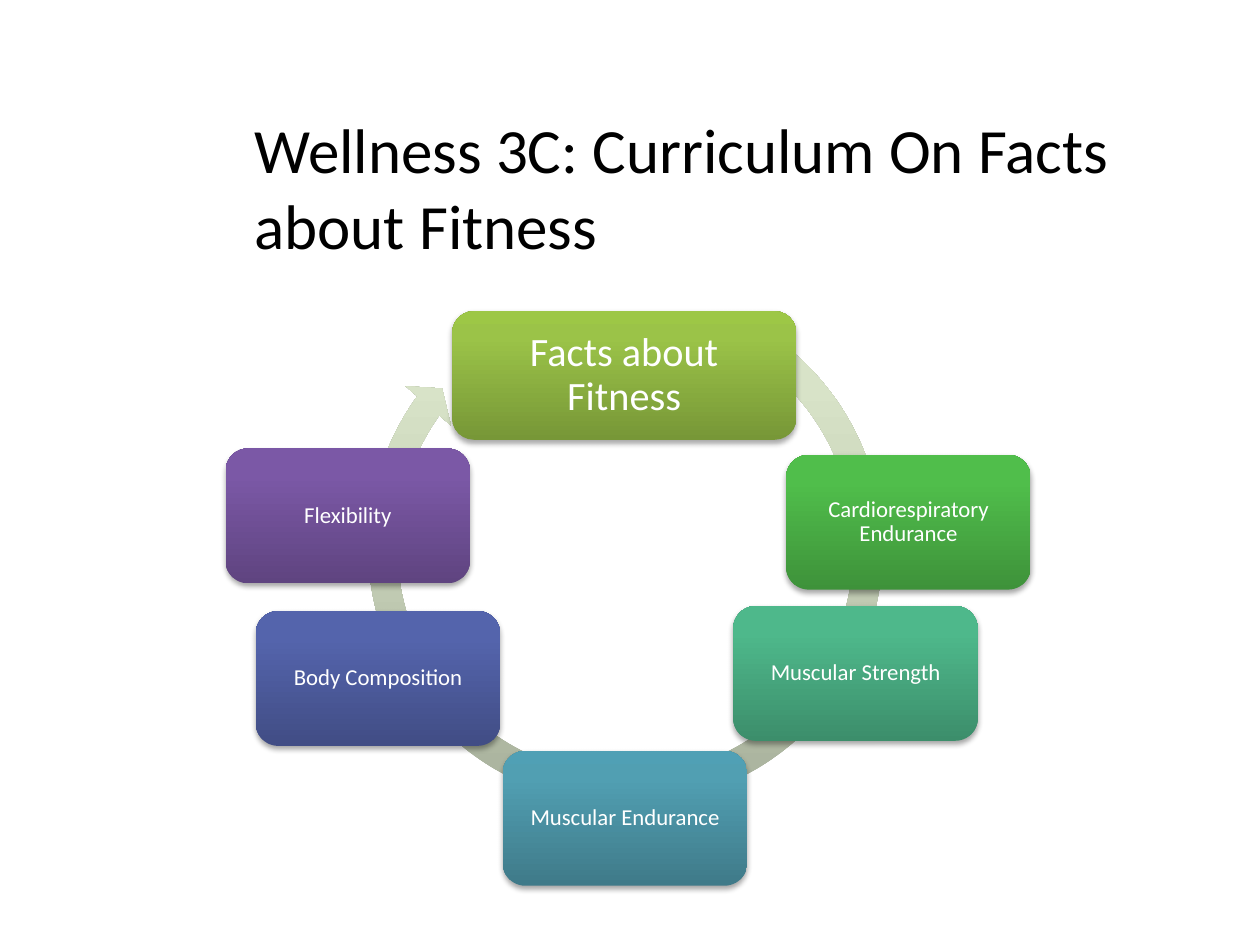
"""Build a slide showing the cycle of fitness facts."""
from copy import deepcopy

from pptx import Presentation
from pptx.dml.color import RGBColor
from pptx.enum import shapes, text
from pptx.oxml import parse_xml
from pptx.oxml.ns import nsdecls
from pptx.util import Inches, Pt

FONT = "Calibri"
COLORS = {"title": "000000", "label": "FFFFFF", "shadow": "000000"}
GRADIENTS = {
    "arrow": ("A6AF9A", "D8E3C8", "D9E4C8"),
    "lime": ("779737", "9BC348", "9DC746"),
    "green": ("3E923A", "50BE4B", "4FC149"),
    "jade": ("3C8E6B", "4EB88B", "4CBB8C"),
    "teal": ("3F7A89", "519FB2", "50A0B5"),
    "blue": ("414D85", "5464AC", "5363AF"),
    "purple": ("5F4480", "7B58A6", "7C57A8"),
}
TOPIC_SIZE = (1.94, 1.07)
TOPICS = [
    ("Cardiorespiratory Endurance", 6.24, 3.61, "green"),
    ("Muscular Strength", 5.82, 4.81, "jade"),
    ("Muscular Endurance", 3.99, 5.96, "teal"),
    ("Body Composition", 2.03, 4.85, "blue"),
    ("Flexibility", 1.79, 3.56, "purple"),
]


def write(tf, content, size, color):
    tf.word_wrap = True
    p = tf.paragraphs[0]
    p.text = content
    font = p.runs[0].font
    font.name, font.size = FONT, Pt(size)
    font.color.rgb = RGBColor.from_string(COLORS[color])
    return p


def add_title(slide):
    tf = slide.shapes.add_textbox(
        Inches(1.92), Inches(0.83), Inches(7), Inches(1.31)).text_frame
    tf.auto_size = text.MSO_AUTO_SIZE.SHAPE_TO_FIT_TEXT
    write(tf, "Wellness 3C: Curriculum On Facts about Fitness", 36, "title")


def add_gradient_shape(group, kind, left, top, width, height, gradient):
    sp = group.shapes.add_shape(
        kind, Inches(left), Inches(top), Inches(width), Inches(height))
    sp.shadow.inherit = False
    sp.line.fill.background()
    sp.fill.gradient()
    sp.fill.gradient_angle = 90
    stops = sp._element.spPr.find(".//{*}gsLst")
    stops.append(deepcopy(stops[-1]))
    for stop, position, color in zip(
            sp.fill.gradient_stops, (0, 0.8, 1), GRADIENTS[gradient]):
        stop.position = position
        stop.color.rgb = RGBColor.from_string(color)
    return sp


def add_shadow(sp):
    sp._element.spPr.find("{*}effectLst").append(parse_xml(
        f'<a:outerShdw {nsdecls("a")} blurRad="{Pt(3.1)}" dist="{Pt(1.8)}" '
        f'dir="5400000" rotWithShape="0"><a:srgbClr val="{COLORS["shadow"]}">'
        '<a:alpha val="35000"/></a:srgbClr></a:outerShdw>'))


def add_arrow(group):
    sp = add_gradient_shape(group, shapes.MSO_SHAPE.CIRCULAR_ARROW,
                            2.8, 2.18, 4.33, 4.33, "arrow")
    for i, value in enumerate((0.053, 3.126, 129.408, 179.3, 0.055)):
        sp.adjustments[i] = value


def add_card(group, label, left, top, width, height, gradient, size, margin):
    sp = add_gradient_shape(group, shapes.MSO_SHAPE.ROUNDED_RECTANGLE,
                            left, top, width, height, gradient)
    add_shadow(sp)
    tf = sp.text_frame
    tf.margin_left = tf.margin_right = Inches(margin)
    tf.margin_top = tf.margin_bottom = Inches(margin)
    tf.vertical_anchor = text.MSO_ANCHOR.MIDDLE
    p = write(tf, label, size, "label")
    p.alignment = text.PP_ALIGN.CENTER
    p.line_spacing = 0.9


def main():
    prs = Presentation()
    prs.slide_width, prs.slide_height = Inches(10), Inches(7.5)
    slide = prs.slides.add_slide(prs.slide_layouts[6])
    add_title(slide)
    cycle = slide.shapes.add_group_shape()
    add_arrow(cycle)
    add_card(cycle, "Facts about Fitness", 3.59, 2.47, 2.73, 1.02,
             "lime", 23, 0.1)
    for label, left, top, gradient in TOPICS:
        add_card(cycle, label, left, top, *TOPIC_SIZE, gradient, 13, 0.05)
    prs.save("out.pptx")


if __name__ == "__main__":
    main()
